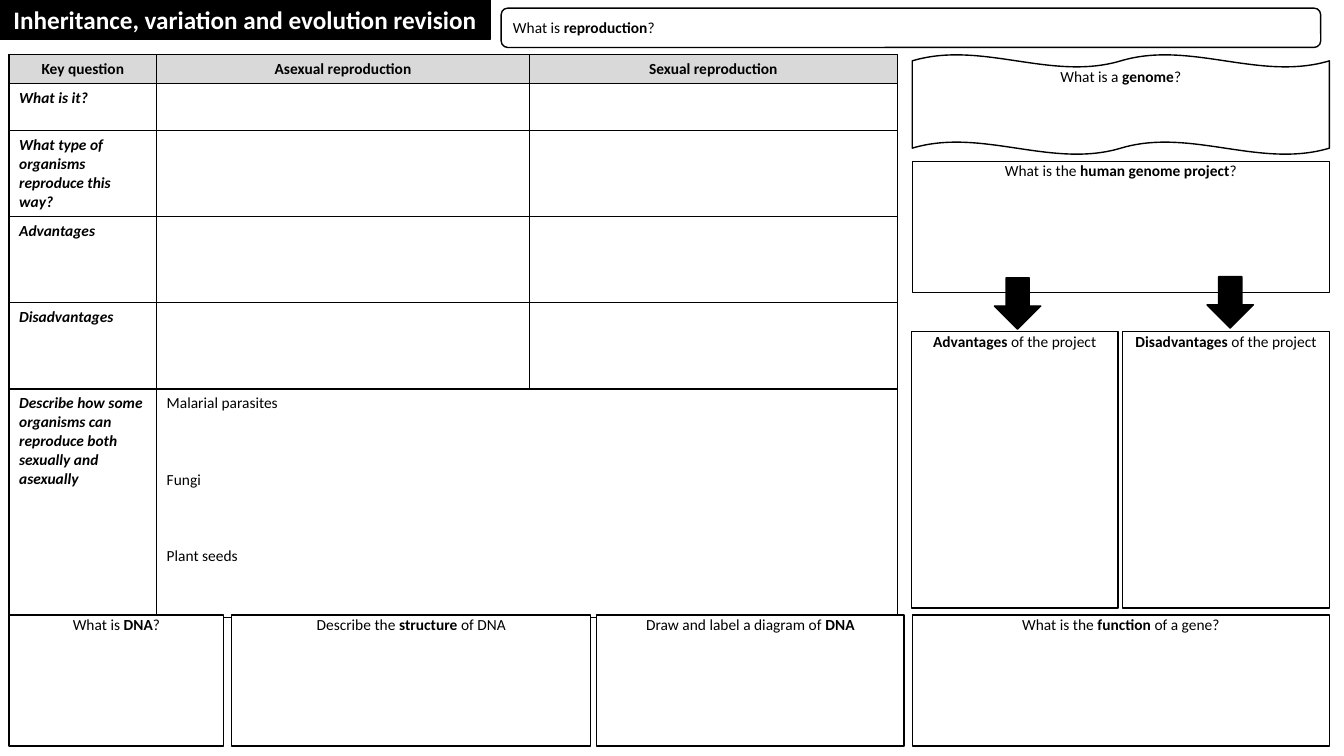
from dataclasses import dataclass

from lxml import etree
from pptx import Presentation
from pptx.dml.color import RGBColor
from pptx.enum.shapes import MSO_SHAPE
from pptx.enum.text import MSO_ANCHOR, PP_ALIGN
from pptx.oxml.ns import qn
from pptx.util import Pt

RECTANGLE = MSO_SHAPE.RECTANGLE
ROUNDED = MSO_SHAPE.ROUNDED_RECTANGLE
WAVE = MSO_SHAPE.DOUBLE_WAVE
ARROW = MSO_SHAPE.RIGHT_ARROW
TOP, MIDDLE = MSO_ANCHOR.TOP, MSO_ANCHOR.MIDDLE
LEFT, CENTER = PP_ALIGN.LEFT, PP_ALIGN.CENTER


@dataclass(frozen=True)
class Theme:
    ink: RGBColor = RGBColor(0, 0, 0)
    paper: RGBColor = RGBColor(255, 255, 255)
    header: RGBColor = RGBColor(0xD9, 0xD9, 0xD9)
    font: str = "Calibri"
    title_size: int = 18
    body_size: int = 11
    line: int = 1


class Worksheet:
    def __init__(self, slide, theme):
        self.slide, self.theme = slide, theme

    def style_font(self, paragraph, color=None, size=None, bold=None, italic=None):
        font = paragraph.font
        font.name = self.theme.font
        font.size = Pt(size or self.theme.body_size)
        font.color.rgb = color or self.theme.ink
        font.bold, font.italic = bold, italic

    def shape(self, kind, left, top, width, height, fill):
        shape = self.slide.shapes.add_shape(
            kind, Pt(left), Pt(top), Pt(width), Pt(height))
        shape.shadow.inherit = False
        shape.fill.solid()
        shape.fill.fore_color.rgb = fill
        shape.line.color.rgb = self.theme.ink
        shape.line.width = Pt(self.theme.line)
        return shape

    def title(self, text, left, top, width, height):
        shape = self.shape(RECTANGLE, left, top, width, height, self.theme.ink)
        shape.text_frame.vertical_anchor = MIDDLE
        paragraph = shape.text_frame.paragraphs[0]
        paragraph.text, paragraph.alignment = text, CENTER
        self.style_font(paragraph, self.theme.paper, self.theme.title_size, True)

    def question(self, text, left, top, width, height,
                 kind=RECTANGLE, anchor=TOP, alignment=CENTER):
        """Add an answer box; words between asterisks are bold."""
        shape = self.shape(kind, left, top, width, height, self.theme.paper)
        frame = shape.text_frame
        frame.vertical_anchor = anchor
        frame.margin_top = frame.margin_bottom = 0
        paragraph = frame.paragraphs[0]
        paragraph.alignment = alignment
        self.style_font(paragraph)
        for index, part in enumerate(text.split("*")):
            if part:
                run = paragraph.add_run()
                run.text, run.font.bold = part, index % 2 == 1

    def down_arrow(self, left, top, width, height):
        self.shape(ARROW, left, top, width, height, self.theme.ink).rotation = 90

    def border(self, cell):
        properties = cell._tc.get_or_add_tcPr()
        for position, side in enumerate(("lnL", "lnR", "lnT", "lnB")):
            line = etree.Element(qn(f"a:{side}"), w=str(Pt(self.theme.line)))
            fill = etree.SubElement(line, qn("a:solidFill"))
            etree.SubElement(fill, qn("a:srgbClr"), val=str(self.theme.ink))
            properties.insert(position, line)

    def table(self, left, top, widths, heights, headers, questions):
        table = self.slide.shapes.add_table(
            len(heights), len(widths), Pt(left), Pt(top),
            Pt(sum(widths)), Pt(sum(heights))).table
        table.first_row = table.horz_banding = False
        for column, width in zip(table.columns, widths):
            column.width = Pt(width)
        for row, height in zip(table.rows, heights):
            row.height = Pt(height)
        for cell in table.iter_cells():
            cell.fill.background()
            self.border(cell)
            self.style_font(cell.text_frame.paragraphs[0])
        for column, text in enumerate(headers):
            cell = table.cell(0, column)
            cell.fill.solid()
            cell.fill.fore_color.rgb = self.theme.header
            paragraph = cell.text_frame.paragraphs[0]
            paragraph.text, paragraph.alignment = text, CENTER
            self.style_font(paragraph, bold=True)
        for row, text in enumerate(questions, 1):
            paragraph = table.cell(row, 0).text_frame.paragraphs[0]
            paragraph.text = text
            self.style_font(paragraph, bold=True, italic=True)
        return table

    def spaced_list(self, cell, items, gap):
        cell.text_frame.text = "\n".join(items)
        for index, paragraph in enumerate(cell.text_frame.paragraphs):
            self.style_font(paragraph)
            paragraph.space_before = Pt(gap if index else 0)


def main():
    presentation = Presentation()
    presentation.slide_width, presentation.slide_height = Pt(960), Pt(540)
    slide = presentation.slides.add_slide(presentation.slide_layouts[6])
    sheet = Worksheet(slide, Theme())

    sheet.title("Inheritance, variation and evolution revision", 0, 0, 350, 28.3)
    table = sheet.table(
        6.5, 39, (105.4, 266.4, 262.6), (20.5, 33.5, 61.5, 61.5, 61.5, 163.5),
        ("Key question", "Asexual reproduction", "Sexual reproduction"),
        ("What is it?", "What type of organisms reproduce this way?",
         "Advantages", "Disadvantages",
         "Describe how some organisms can reproduce both sexually and asexually"))
    examples = table.cell(5, 1)
    examples.merge(table.cell(5, 2))
    sheet.spaced_list(examples, ("Malarial parasites", "Fungi", "Plant seeds"), 41)

    sheet.question("What is *reproduction*?", 358, 5.8, 585.4, 28.1,
                   ROUNDED, MIDDLE, LEFT)

    right, right_width, box_height = 651.6, 298, 93.6
    dna_boxes = (
        ("What is *DNA*?", 6.5, 153.4),
        ("Describe the *structure* of DNA", 165.6, 256.3),
        ("Draw and label a diagram of *DNA*", 426.2, 219.6),
        ("What is the *function* of a gene?", right, right_width))
    for text, left, width in dna_boxes:
        sheet.question(text, left, 439.2, width, box_height)

    sheet.question("What is a *genome*?", right, 39, right_width, 71.3, WAVE)
    sheet.question("What is the *human genome project*?",
                   right, 115.2, right_width, box_height)
    for text, left in (("Advantages", 651), ("Disadvantages", 802)):
        sheet.question(f"*{text}* of the project", left, 237, 147.6, 197.3)
    for left, top in ((860.4, 199.4), (708.5, 200.2)):
        sheet.down_arrow(left, top, 36.7, 33.1)

    presentation.save("out.pptx")


if __name__ == "__main__":
    main()
